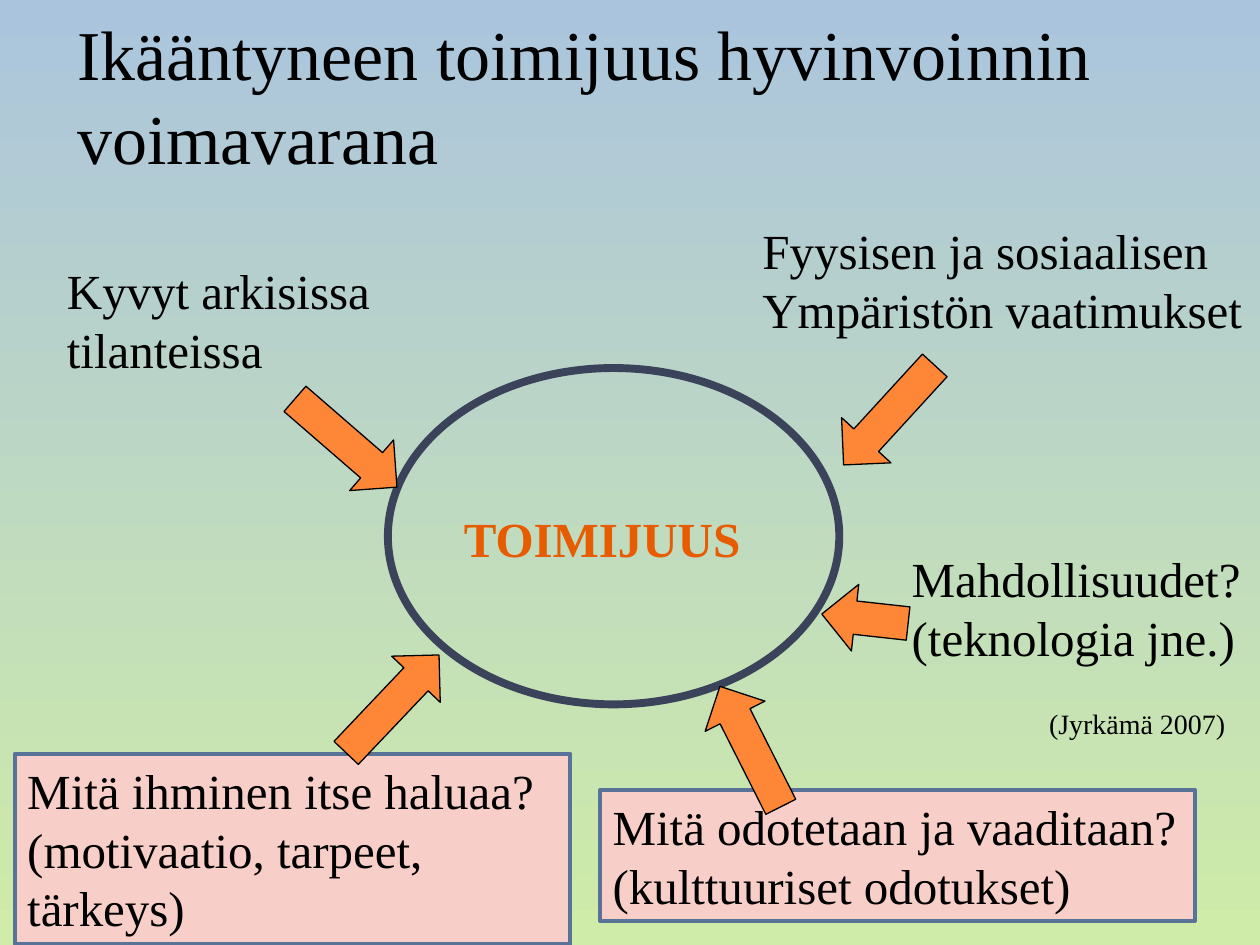
"""Build a slide on the agency of older people as a resource for well-being."""
import pptx
import pptx.dml.color
import pptx.enum.shapes
import pptx.enum.text
import pptx.util

Cm = pptx.util.Cm
Pt = pptx.util.Pt
SHAPES = pptx.enum.shapes.MSO_SHAPE
ANCHOR = pptx.enum.text.MSO_ANCHOR
AUTO_SIZE = pptx.enum.text.MSO_AUTO_SIZE
COLORS = {
    "sky": "ABC4DD", "meadow": "CFECA8", "text": "000000", "accent": "E75C01",
    "ring": "3B435B", "box": "F8CFC8", "box_line": "587298", "arrow": "FE8637",
}


def rgb(name):
    return pptx.dml.color.RGBColor.from_string(COLORS[name])


def write_text(shape, text, size=28, color="text", bold=False, wrap=False,
               anchor=ANCHOR.TOP, auto_size=AUTO_SIZE.SHAPE_TO_FIT_TEXT):
    frame = shape.text_frame
    frame.text = text
    frame.word_wrap = wrap
    frame.auto_size = auto_size
    frame.vertical_anchor = anchor
    for paragraph in frame.paragraphs:
        paragraph.alignment = pptx.enum.text.PP_ALIGN.LEFT
        paragraph.font.name = "Times New Roman"
        paragraph.font.size = Pt(size)
        paragraph.font.bold = bold
        paragraph.font.color.rgb = rgb(color)


presentation = pptx.Presentation()
presentation.slide_width = Cm(25.4)
presentation.slide_height = Cm(19.05)
slide = presentation.slides.add_slide(presentation.slide_layouts[5])

background = slide.background.fill
background.gradient()
background.gradient_angle = 270
for stop, color in zip(background.gradient_stops, ("sky", "meadow")):
    stop.color.rgb = rgb(color)

title = slide.shapes.title
title.left, title.top, title.width, title.height = Cm(1.3), Cm(0), Cm(23), Cm(3.73)
write_text(title, "Ikääntyneen toimijuus hyvinvoinnin voimavarana", size=40,
           wrap=True, anchor=ANCHOR.BOTTOM, auto_size=AUTO_SIZE.NONE)

ring = slide.shapes.add_shape(SHAPES.OVAL, Cm(7.82), Cm(7.42), Cm(9.1), Cm(6.78))
ring.shadow.inherit = False
ring.fill.background()
ring.line.color.rgb = rgb("ring")
ring.line.width = Pt(4.5)

boxes = [
    ("Mitä odotetaan ja vaaditaan?\n(kulttuuriset odotukset)", 12.1, 15.93, 11.99, 2.64, False),
    ("Mitä ihminen itse haluaa?\n(motivaatio, tarpeet,\ntärkeys)", 0.3, 15.2, 11.2, 3.84, True),
]
for text, left, top, width, height, wrap in boxes:
    box = slide.shapes.add_shape(SHAPES.RECTANGLE, Cm(left), Cm(top), Cm(width), Cm(height))
    box.shadow.inherit = False
    box.fill.solid()
    box.fill.fore_color.rgb = rgb("box")
    box.line.color.rgb = rgb("box_line")
    box.line.width = Pt(2.25)
    write_text(box, text, wrap=wrap)

labels = [
    ("TOIMIJUUS", 9.1, 10.13, 6.15, 1.45, {"color": "accent", "bold": True}),
    ("Kyvyt arkisissa\ntilanteissa", 1.1, 5.13, 6.68, 2.64, {}),
    ("Fyysisen ja sosiaalisen\nYmpäristön vaatimukset", 15.12, 4.32, 10.28, 2.64, {}),
    ("Mahdollisuudet?\n(teknologia jne.)", 18.13, 10.93, 7.22, 2.64, {}),
    ("(Jyrkämä 2007)", 20.9, 14.12, 4.11, 0.94, {"size": 16}),
]
for text, left, top, width, height, style in labels:
    label = slide.shapes.add_textbox(Cm(left), Cm(top), Cm(width), Cm(height))
    write_text(label, text, **style)

arrows = [
    (6.3, 7.57, 2.72, 310.9),
    (7.24, 12.83, 2.72, 223.5),
    (17.25, 7.01, 2.72, 42.5),
    (16.76, 11.6, 1.75, 96.3),
    (14.45, 13.69, 2.72, 153.2),
]
for left, top, length, rotation in arrows:
    arrow = slide.shapes.add_shape(SHAPES.DOWN_ARROW, Cm(left), Cm(top), Cm(1.35), Cm(length))
    arrow.shadow.inherit = False
    arrow.rotation = rotation
    arrow.fill.solid()
    arrow.fill.fore_color.rgb = rgb("arrow")
    arrow.line.color.rgb = rgb("text")
    arrow.line.width = Pt(0.75)

presentation.save("out.pptx")
